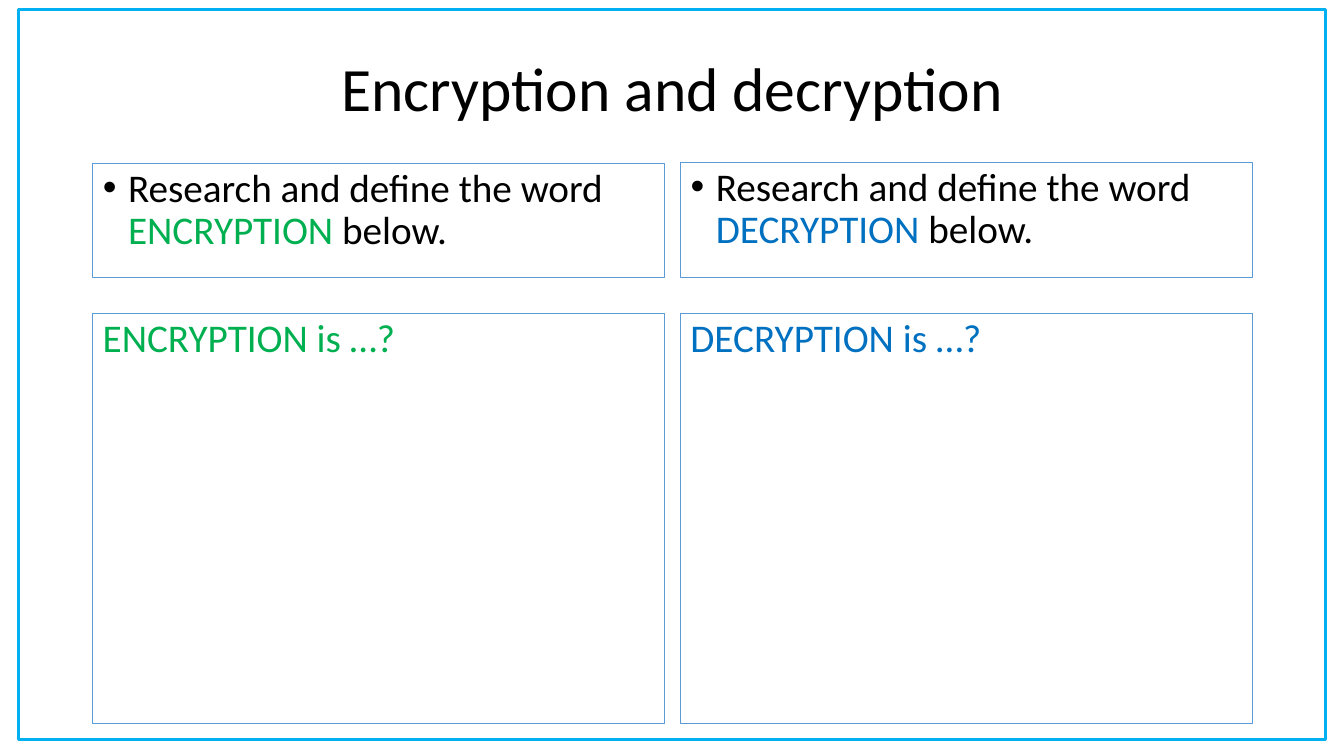
from lxml.etree import SubElement
from pptx import Presentation
from pptx.dml.color import RGBColor
from pptx.enum.shapes import MSO_SHAPE
from pptx.enum.text import MSO_ANCHOR, MSO_AUTO_SIZE, PP_ALIGN
from pptx.oxml.ns import qn
from pptx.util import Inches, Pt

# Content
TITLE = "Encryption and decryption"
TASK_START, TASK_END = "Research and define the word ", " below."
QUESTION = " is …?"
# word, colour, task box top
TERMS = [("ENCRYPTION", "00B050", 1.62), ("DECRYPTION", "0070C0", 1.61)]
BLACK, WHITE, BORDER, BOX_LINE = "000000", "FFFFFF", "00B0F0", "5B9BD5"

# Grid in inches
WIDTH, HEIGHT = 13.33, 7.5
LEFT, COLUMN, GAP = 0.92, 5.67, 0.16
TASK_BOTTOM = 2.75
ANSWER_TOP, ANSWER_HEIGHT = 3.11, 4.07


def color(value):
    return RGBColor.from_string(value)


def outline(shape, value, width=0.75):
    shape.line.color.rgb = color(value)
    shape.line.width = Pt(width)


def place(shape, left, top, width, height):
    shape.left, shape.top = Inches(left), Inches(top)
    shape.width, shape.height = Inches(width), Inches(height)


def add_bullet(para, indent=0.25):
    properties = para._p.get_or_add_pPr()
    properties.set("marL", str(Inches(indent)))
    properties.set("indent", str(-Inches(indent)))
    SubElement(properties, qn("a:buFont")).set("typeface", "Arial")
    SubElement(properties, qn("a:buChar")).set("char", "•")


def write(box, spans, size=28, align=PP_ALIGN.LEFT, anchor=MSO_ANCHOR.TOP, bullet=False):
    """Fill a box with one paragraph of (text, colour) spans."""
    frame = box.text_frame
    frame.word_wrap = True
    frame.auto_size = MSO_AUTO_SIZE.NONE
    frame.vertical_anchor = anchor
    para = frame.paragraphs[0]
    para.alignment = align
    para.line_spacing = 0.9
    para.space_before = Pt(0)
    if bullet:
        add_bullet(para)
    for text, value in spans:
        span = para.add_run()
        span.text = text
        span.font.name = "Calibri"
        span.font.size = Pt(size)
        span.font.color.rgb = color(value)


deck = Presentation()
deck.slide_width, deck.slide_height = Inches(WIDTH), Inches(HEIGHT)
page = deck.slides.add_slide(deck.slide_layouts.get_by_name("Two Content"))

# Page border, behind everything else
border = page.shapes.add_shape(
    MSO_SHAPE.RECTANGLE, Inches(0.18), Inches(0.09), Inches(12.97), Inches(7.25))
border.shadow.inherit = False
border.fill.background()
outline(border, BORDER, 2.25)
page.shapes.element.insert(2, border.element)

# Title
title = page.shapes.title
place(title, LEFT, 0.4, 2 * COLUMN + GAP, 1.02)
outline(title, WHITE)
write(title, [(TITLE, BLACK)], size=44, align=PP_ALIGN.CENTER, anchor=MSO_ANCHOR.MIDDLE)

# One column per term: task above, answer space below
for column, (word, value, top) in enumerate(TERMS):
    left = LEFT + column * (COLUMN + GAP)
    task = page.placeholders[column + 1]
    place(task, left, top, COLUMN, TASK_BOTTOM - top)
    outline(task, BOX_LINE)
    write(task, [(TASK_START, BLACK), (word, value), (TASK_END, BLACK)], bullet=True)

    answer = page.shapes.add_textbox(
        Inches(left), Inches(ANSWER_TOP), Inches(COLUMN), Inches(ANSWER_HEIGHT))
    outline(answer, BOX_LINE)
    write(answer, [(word + QUESTION, value)])

deck.save("out.pptx")
